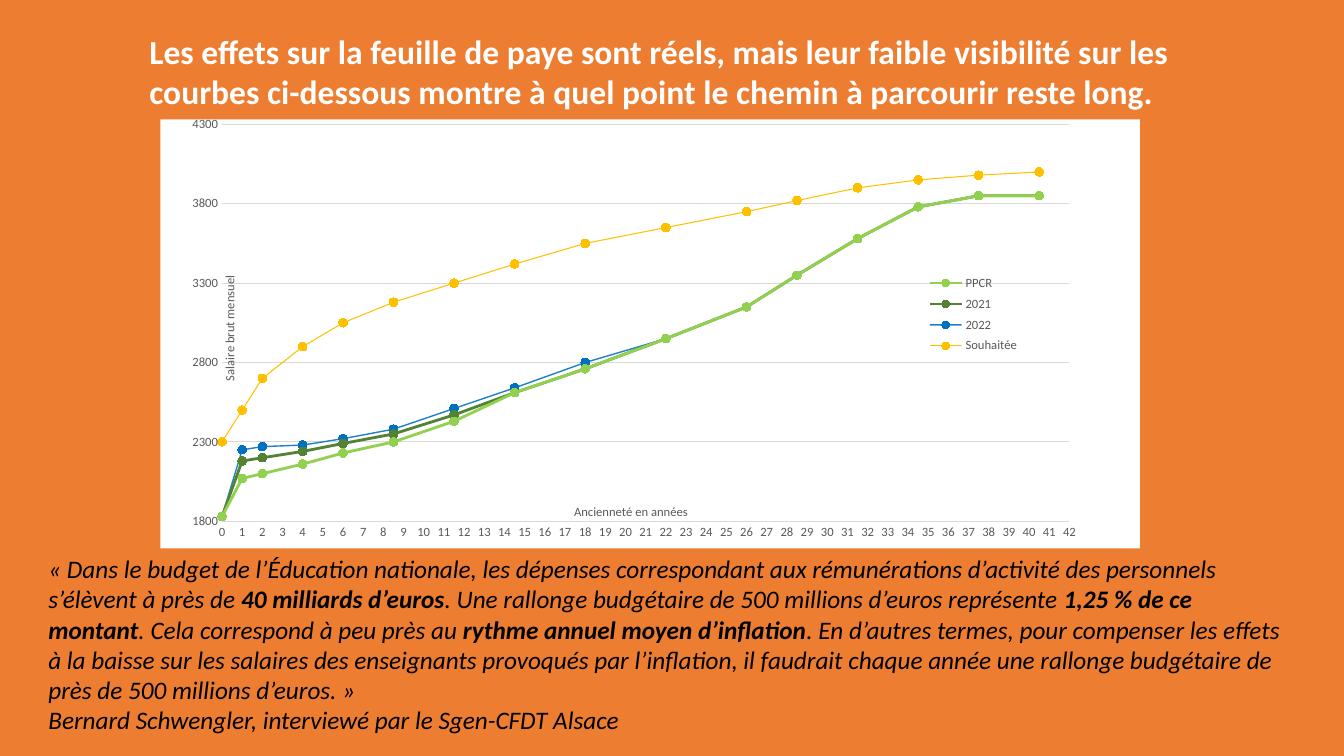
from lxml.etree import SubElement
from pptx import Presentation
from pptx.chart.data import XyChartData
from pptx.dml.color import RGBColor
from pptx.enum.chart import XL_CHART_TYPE as ChartType, XL_LEGEND_POSITION as LegendPosition
from pptx.enum.chart import XL_MARKER_STYLE as Marker, XL_TICK_MARK as Tick
from pptx.enum.text import MSO_ANCHOR as Anchor, MSO_AUTO_SIZE as AutoSize, PP_ALIGN as Align
from pptx.oxml import parse_xml
from pptx.oxml.ns import nsdecls, qn
from pptx.util import Cm, Pt

FONT = "Calibri"
COLORS = {"orange": "ED7D31", "white": "FFFFFF", "black": "000000", "label": "595959",
          "grid": "D9D9D9", "light green": "92D050", "dark green": "548235",
          "blue": "0070C0", "yellow": "FFC000"}

TITLE = ("Les effets sur la feuille de paye sont réels, mais leur faible visibilité sur les "
         "courbes ci-dessous montre à quel point le chemin à parcourir reste long.")
QUOTE = [
    [("« Dans le budget de l’Éducation nationale, les dépenses correspondant aux rémunérations "
      "d’activité des personnels s’élèvent à près de ", False),
     ("40 milliards d’euros", True),
     (". Une rallonge budgétaire de 500 millions d’euros représente ", False),
     ("1,25 % de ce montant", True),
     (". Cela correspond à peu près au ", False),
     ("rythme annuel moyen d’inflation", True),
     (". En d’autres termes, pour compenser les effets à la baisse sur les salaires des "
      "enseignants provoqués par l’inflation, il faudrait chaque année une rallonge "
      "budgétaire de près de 500 millions d’euros. »", False)],
    [("Bernard Schwengler, interviewé par le Sgen-CFDT Alsace", False)],
]

YEARS = [0, 1, 2, 4, 6, 8.5, 11.5, 14.5, 18, 22, 26, 28.5, 31.5, 34.5, 37.5, 40.5]
LATE_CAREER = [2950, 3150, 3350, 3580, 3780, 3850, 3850]
SALARIES = [
    ("PPCR", "light green", 2, 100,
     [1830, 2070, 2100, 2160, 2230, 2300, 2430, 2610, 2760] + LATE_CAREER),
    ("2021", "dark green", 2, 100,
     [1830, 2180, 2200, 2240, 2290, 2350, 2470, 2610, 2760] + LATE_CAREER),
    ("2022", "blue", 1, 88,
     [1830, 2250, 2270, 2280, 2320, 2380, 2510, 2640, 2800] + LATE_CAREER),
    ("Souhaitée", "yellow", 0.75, 100,
     [2300, 2500, 2700, 2900, 3050, 3180, 3300, 3420, 3550,
      3650, 3750, 3820, 3900, 3950, 3980, 4000]),
]

TITLE_AREA = (3.51, 0.64, 27.41, 2.31)
CHART_AREA = (4.04, 2.95, 24.69, 10.87)
QUOTE_AREA = (0.97, 13.82, 31.57, 4.88)
PLOT_LAYOUT = {"x": 0.063, "y": 0.012, "w": 0.865, "h": 0.925}
LEGEND_LAYOUT = {"x": 0.77, "y": 0.35, "w": 0.12, "h": 0.21}
YEAR_TITLE_LAYOUT = {"x": 0.42, "y": 0.89}
SALARY_TITLE_LAYOUT = {"x": 0.06, "y": 0.36}


def rgb(name):
    return RGBColor.from_string(COLORS[name])


def style(font, size, color, bold=False, italic=False):
    font.name, font.size, font.bold, font.italic = FONT, Pt(size), bold, italic
    font.color.rgb = rgb(color)


def place(element, fractions, inner=False):
    layout = parse_xml(f"<c:layout {nsdecls('c')}><c:manualLayout/></c:layout>")
    settings = [("layoutTarget", "inner")] if inner else []
    settings += [(f"{side}Mode", "edge") for side in ("x", "y")]
    settings += list(fractions.items())
    for tag, value in settings:
        SubElement(layout[0], qn(f"c:{tag}")).set("val", str(value))
    current = element.find(qn("c:layout"))
    overlay = element.find(qn("c:overlay"))
    if current is not None:
        element.replace(current, layout)
    elif overlay is not None:
        overlay.addprevious(layout)
    else:
        element.insert(0, layout)


def format_axis(axis, title, limits, step, layout, rotation):
    axis.minimum_scale, axis.maximum_scale = limits
    axis.major_unit = step
    axis.major_tick_mark = axis.minor_tick_mark = Tick.NONE
    axis.tick_labels.number_format = "0"
    axis.tick_labels.number_format_is_linked = False
    style(axis.tick_labels.font, 9, "label")
    frame = axis.axis_title.text_frame
    frame.text = title
    style(frame.paragraphs[0].font, 9, "label")
    element = axis.axis_title.element
    element.find(f".//{qn('a:bodyPr')}").set("rot", str(rotation * 60000))
    place(element, layout)


def add_title(page):
    title = page.shapes.title
    title.left, title.top, title.width, title.height = map(Cm, TITLE_AREA)
    frame = title.text_frame
    frame.text = TITLE
    frame.word_wrap = True
    frame.auto_size = AutoSize.NONE
    frame.vertical_anchor = Anchor.TOP
    para = frame.paragraphs[0]
    para.alignment = Align.LEFT
    style(para.font, 24, "white", bold=True)


def add_salary_chart(page):
    data = XyChartData()
    for name, *_, salaries in SALARIES:
        points = data.add_series(name)
        for year, salary in zip(YEARS, salaries):
            points.add_data_point(year, salary)
    chart = page.shapes.add_chart(ChartType.XY_SCATTER_LINES, *map(Cm, CHART_AREA), data).chart
    style(chart.font, 10, "black")
    chart.has_title = False
    chart.element.find(qn("c:chart")).addnext(parse_xml(
        f"<c:spPr {nsdecls('c', 'a')}><a:solidFill><a:srgbClr val=\"{COLORS['white']}\"/>"
        "</a:solidFill><a:ln><a:noFill/></a:ln></c:spPr>"))
    place(chart.element.find(f".//{qn('c:plotArea')}"), PLOT_LAYOUT, inner=True)

    years, salaries = chart.category_axis, chart.value_axis
    format_axis(years, "Ancienneté en années", (0, 42), 1, YEAR_TITLE_LAYOUT, 0)
    format_axis(salaries, "Salaire brut mensuel", (1800, 4300), 500, SALARY_TITLE_LAYOUT, -90)
    years.has_major_gridlines = False
    salaries.has_major_gridlines = True
    salaries.format.line.fill.background()
    for line, width in ((years.format.line, 1), (salaries.major_gridlines.format.line, 0.75)):
        line.color.rgb = rgb("grid")
        line.width = Pt(width)

    chart.has_legend = True
    chart.legend.position = LegendPosition.RIGHT
    chart.legend.include_in_layout = False
    style(chart.legend.font, 9, "label")
    place(chart.legend.element if hasattr(chart.legend, "element")
          else chart.element.find(f".//{qn('c:legend')}"), LEGEND_LAYOUT)

    plot = chart.plots[0]
    plot.vary_by_categories = False
    for series, (_, color, width, opacity, _) in zip(plot.series, SALARIES):
        series.smooth = False
        series.format.line.color.rgb = rgb(color)
        series.format.line.width = Pt(width)
        if opacity < 100:
            shade = series.format.element if hasattr(series.format, "element") else None
            shade = chart.element.findall(f".//{qn('c:ser')}")[
                [name for name, *_ in SALARIES].index(series.name)]
            tint = shade.find(f"{qn('c:spPr')}/{qn('a:ln')}//{qn('a:srgbClr')}")
            SubElement(tint, qn("a:alpha")).set("val", str(opacity * 1000))
        marker = series.marker
        marker.style, marker.size = Marker.CIRCLE, 6
        marker.format.fill.solid()
        marker.format.fill.fore_color.rgb = rgb(color)
        marker.format.line.color.rgb = rgb(color)


def add_quote(page):
    frame = page.shapes.add_textbox(*map(Cm, QUOTE_AREA)).text_frame
    frame.word_wrap = True
    for number, spans in enumerate(QUOTE):
        para = frame.add_paragraph() if number else frame.paragraphs[0]
        style(para.font, 18, "black", italic=True)
        for text, bold in spans:
            span = para.add_run()
            span.text = text
            if bold:
                span.font.bold = True


def main():
    deck = Presentation()
    deck.slide_width, deck.slide_height = Cm(33.87), Cm(19.05)
    page = deck.slides.add_slide(deck.slide_layouts[5])
    page.background.fill.solid()
    page.background.fill.fore_color.rgb = rgb("orange")
    add_title(page)
    add_salary_chart(page)
    add_quote(page)
    deck.save("out.pptx")


if __name__ == "__main__":
    main()
